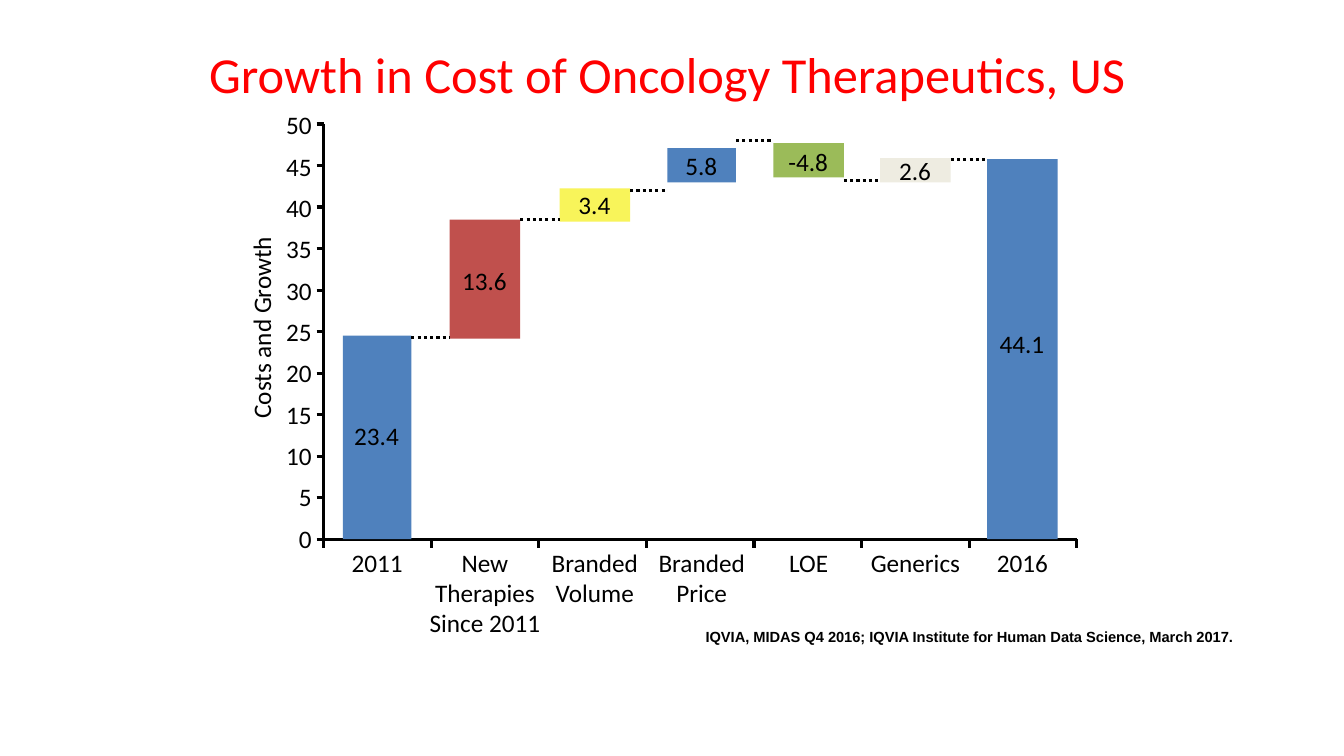
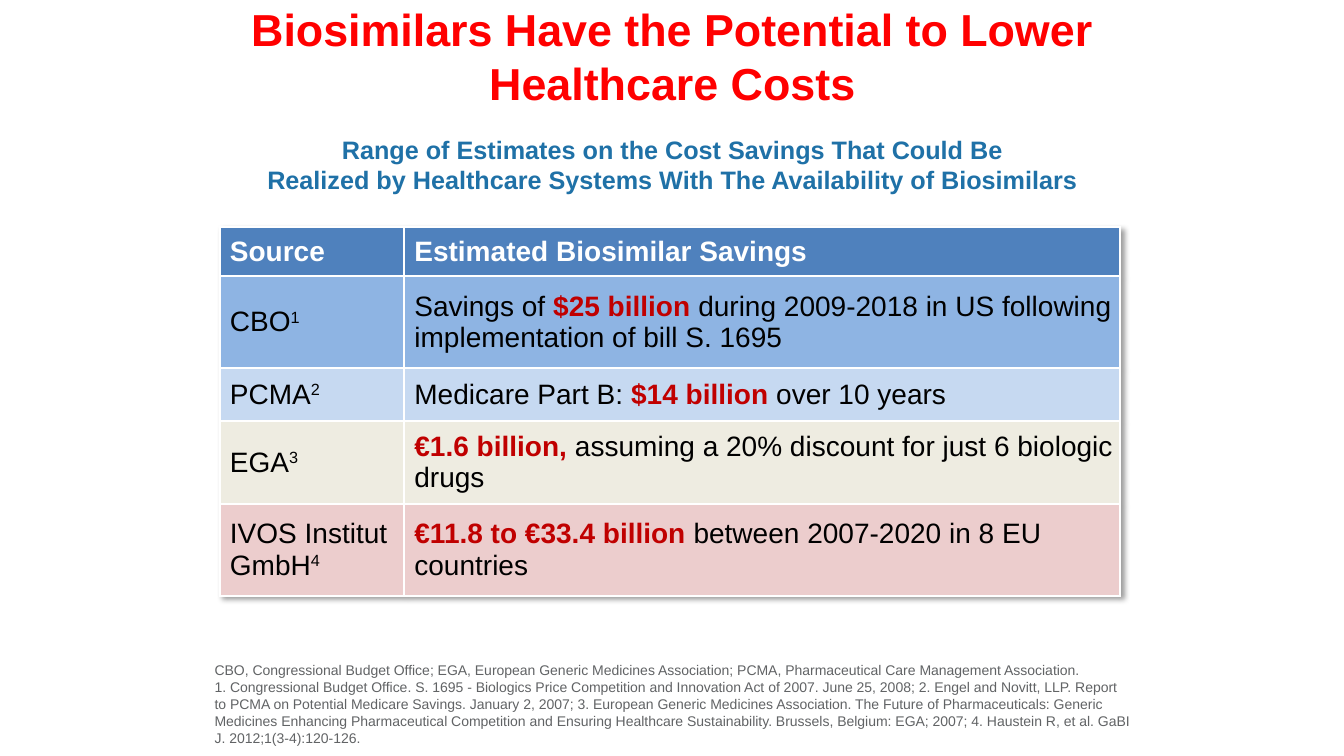
from lxml.etree import SubElement
from pptx import Presentation
from pptx.dml.color import RGBColor
from pptx.enum.dml import MSO_LINE
from pptx.enum.shapes import MSO_CONNECTOR, MSO_SHAPE
from pptx.enum.text import MSO_ANCHOR as Anchor, PP_ALIGN as Align
from pptx.oxml import parse_xml
from pptx.oxml.ns import nsdecls, qn
from pptx.util import Inches, Pt

COLORS = {
    "title": "FF0000", "black": "000000", "white": "FFFFFF", "blue": "4F81BD",
    "red": "C0504D", "yellow": "F8F45A", "green": "9BBB59", "cream": "EEECE1",
    "sky": "8EB4E3", "pale": "C6D9F1", "pink": "ECCDCD", "savings": "C00000",
    "subtitle": "1F71A7", "note": "616365",
}
DEFAULT_INSETS = (0.1, 0.05, 0.1, 0.05)
NO_SIDE_INSETS = (0, 0.05, 0, 0.05)

COST_TITLE = "Growth in Cost of Oncology Therapeutics, US"
COST_SOURCE = "IQVIA, MIDAS Q4 2016; IQVIA Institute for Human Data Science, March 2017."
AXIS_TITLE = "Costs and Growth"
AXIS_MAX, AXIS_STEP = 50, 5
PLOT_LEFT, PLOT_TOP, PLOT_RIGHT, PLOT_BOTTOM = 3.21, 1.23, 10.68, 5.35
BARS = [
    (["2011"], "23.4", "blue", (3.4, 3.33, 0.68, 2.02), 4.12),
    (["New", "Therapies", "Since 2011"], "13.6", "red", (4.46, 2.18, 0.7, 1.18), 2.58),
    (["Branded", "Volume"], "3.4", "yellow", (5.55, 1.87, 0.7, 0.33), 1.83),
    (["Branded", "Price"], "5.8", "blue", (6.62, 1.47, 0.68, 0.34), 1.44),
    (["LOE"], "-4.8", "green", (7.67, 1.42, 0.7, 0.34), 1.4),
    (["Generics"], "2.6", "cream", (8.73, 1.57, 0.7, 0.24), 1.49),
    (["2016"], "44.1", "blue", (9.79, 1.58, 0.7, 3.77), 3.21),
]
LINK_HEIGHTS = [3.35, 2.18, 1.89, 1.39, 1.79, 1.58]

SAVINGS_TITLE = "Biosimilars Have the Potential to Lower Healthcare Costs"
SAVINGS_SUBTITLE = (
    "Range of Estimates on the Cost Savings That Could Be\n"
    "Realized by Healthcare Systems With The Availability of Biosimilars"
)
HEADERS = ["Source", "Estimated Biosimilar Savings"]
ESTIMATES = [
    ("CBO", "1", "Savings of ", "$25 billion ",
     "during 2009-2018 in US following implementation of bill S. 1695", "sky"),
    ("PCMA", "2", "Medicare Part B: ", "$14 billion ", "over 10 years", "pale"),
    ("EGA", "3", "", "€1.6 billion, ",
     "assuming a 20% discount for just 6 biologic drugs", "cream"),
    ("IVOS Institut GmbH", "4", "", "€11.8 to €33.4 billion ",
     "between 2007-2020 in 8 EU countries", "pink"),
]
COLUMN_WIDTHS = [1.83, 7.1]
ROW_HEIGHTS = [0.49, 0.91, 0.53, 0.82, 0.91]
REFERENCES = [
    "CBO, Congressional Budget Office; EGA, European Generic Medicines Association; "
    "PCMA, Pharmaceutical Care Management Association.",
    "1. Congressional Budget Office. S. 1695 - Biologics Price Competition and "
    "Innovation Act of 2007. June 25, 2008; 2. Engel and Novitt, LLP. Report to PCMA "
    "on Potential Medicare Savings. January 2, 2007; 3. European Generic Medicines "
    "Association. The Future of Pharmaceuticals: Generic Medicines Enhancing "
    "Pharmaceutical Competition and Ensuring Healthcare Sustainability. Brussels, "
    "Belgium: EGA; 2007; 4. Haustein R, et al. GaBI J. 2012;1(3-4):120-126.",
]


def rgb(name):
    return RGBColor.from_string(COLORS[name])


def write(frame, paragraphs, size=18, font="Calibri", color="black", bold=False,
          align=Align.LEFT, anchor=Anchor.TOP, insets=DEFAULT_INSETS):
    frame.word_wrap = True
    frame.vertical_anchor = anchor
    (frame.margin_left, frame.margin_top,
     frame.margin_right, frame.margin_bottom) = map(Inches, insets)
    for index, content in enumerate(paragraphs):
        para = frame.add_paragraph() if index else frame.paragraphs[0]
        para.alignment = align
        runs = [(content, {})] if isinstance(content, str) else content
        for text, style in runs:
            for number, line in enumerate(text.split("\n")):
                if number:
                    para.add_line_break()
                span = para.add_run()
                span.text = line
                span.font.size = Pt(size)
                span.font.name = font
                span.font.bold = style.get("bold", bold)
                span.font.color.rgb = rgb(style.get("color", color))
                if style.get("superscript"):
                    span.font._element.set("baseline", "30000")


def add_text(page, place, paragraphs, **style):
    box = page.shapes.add_textbox(*map(Inches, place))
    write(box.text_frame, paragraphs, **style)
    return box


def add_block(page, preset, place, fill=None):
    block = page.shapes.add_shape(preset, *map(Inches, place))
    block.shadow.inherit = False
    block.line.fill.background()
    if fill:
        block.fill.solid()
        block.fill.fore_color.rgb = rgb(fill)
    else:
        block.fill.background()
    return block


def add_title(page, place, text, **style):
    add_text(page, place, [text], color="title", align=Align.CENTER,
             anchor=Anchor.MIDDLE, **style)


def add_line(page, x1, y1, x2, y2, dash=None):
    line = page.shapes.add_connector(
        MSO_CONNECTOR.STRAIGHT, *map(Inches, (x1, y1, x2, y2)))
    line.line.color.rgb = rgb("black")
    line.line.width = Pt(2.25)
    if dash:
        line.line.dash_style = dash
    SubElement(line._element.spPr, qn("a:effectLst"))


def add_axes(page):
    for index, value in enumerate(range(0, AXIS_MAX + 1, AXIS_STEP)):
        y = PLOT_BOTTOM - value / AXIS_MAX * (PLOT_BOTTOM - PLOT_TOP)
        add_line(page, PLOT_LEFT - 0.07, y, PLOT_LEFT, y)
        add_text(page, (2.73, 5.14 - 0.41 * index, 0.46, 0.4), [str(value)],
                 align=Align.RIGHT, insets=(0, 0.05, 0.1, 0.05))
    slot = (PLOT_RIGHT - PLOT_LEFT) / len(BARS)
    for index in range(len(BARS) + 1):
        x = PLOT_LEFT + index * slot
        add_line(page, x, PLOT_BOTTOM, x, PLOT_BOTTOM + 0.09)
    outline = page.shapes.build_freeform(Inches(PLOT_RIGHT), Inches(PLOT_BOTTOM))
    outline.add_line_segments(
        [(Inches(PLOT_LEFT), Inches(PLOT_BOTTOM)), (Inches(PLOT_LEFT), Inches(PLOT_TOP))],
        close=False)
    axes = outline.convert_to_shape()
    axes.shadow.inherit = False
    axes.fill.background()
    axes.line.color.rgb = rgb("black")
    axes.line.width = Pt(2.25)
    label = add_text(page, (1.55, 3.05, 2.08, 0.4), [AXIS_TITLE], align=Align.CENTER)
    label.rotation = 270


def add_bars(page):
    for category, value, color, place, label_top in BARS:
        left, _, width, _ = place
        center = left + width / 2
        add_block(page, MSO_SHAPE.RECTANGLE, place, color)
        add_text(page, (center - 0.33, label_top, 0.65, 0.4), [value],
                 align=Align.CENTER, insets=NO_SIDE_INSETS)
        add_text(page, (center - 0.65, 5.38, 1.3, 0.1 + 0.3 * len(category)), category,
                 align=Align.CENTER, insets=NO_SIDE_INSETS)
    places = [bar[3] for bar in BARS]
    for before, after, y in zip(places, places[1:], LINK_HEIGHTS):
        add_line(page, before[0] + before[2], y, after[0], y, MSO_LINE.ROUND_DOT)


def style_cell(cell, color):
    cell.fill.solid()
    cell.fill.fore_color.rgb = rgb(color)
    properties = cell._tc.get_or_add_tcPr()
    for position, side in enumerate(("lnL", "lnR", "lnT", "lnB")):
        properties.insert(position, parse_xml(
            f'<a:{side} {nsdecls("a")} w="19050"><a:solidFill>'
            f'<a:srgbClr val="{COLORS["white"]}"/></a:solidFill></a:{side}>'))


def add_table(page):
    rows = [(HEADERS, "blue", {"color": "white", "bold": True})]
    for source, number, lead, amount, rest, color in ESTIMATES:
        name = [(source, {}), (number, {"superscript": True})]
        saving = [(lead, {})] if lead else []
        saving += [(amount, {"color": "savings", "bold": True}), (rest, {})]
        rows.append(([name, saving], color, {}))
    table = page.shapes.add_table(
        len(rows), len(COLUMN_WIDTHS), Inches(2.18), Inches(2.25),
        Inches(sum(COLUMN_WIDTHS)), Inches(sum(ROW_HEIGHTS))).table
    table.horz_banding = False
    for column, width in zip(table.columns, COLUMN_WIDTHS):
        column.width = Inches(width)
    for index, (contents, color, style) in enumerate(rows):
        table.rows[index].height = Inches(ROW_HEIGHTS[index])
        for cell, content in zip(table.rows[index].cells, contents):
            write(cell.text_frame, [content], size=20, font="Arial", **style)
            cell.vertical_anchor = Anchor.MIDDLE
            cell.margin_left = Inches(0.1)
            cell.margin_right = cell.margin_top = cell.margin_bottom = Inches(0.05)
            style_cell(cell, color)
    table._tbl.tblPr.insert(0, parse_xml(
        f'<a:effectLst {nsdecls("a")}><a:outerShdw blurRad="50800" dist="38100" '
        f'dir="2700000" algn="tl" rotWithShape="0"><a:srgbClr val="{COLORS["black"]}">'
        '<a:alpha val="40000"/></a:srgbClr></a:outerShdw></a:effectLst>'))


def build_cost_slide(page):
    add_title(page, (1.62, 0.12, 10, 1.21), COST_TITLE, size=36)
    add_text(page, (6.9, 6.16, 6, 0.29), [COST_SOURCE], size=10.5, font="Arial",
             bold=True, anchor=Anchor.BOTTOM)
    add_axes(page)
    add_bars(page)


def build_savings_slide(page):
    add_title(page, (1.67, 0.03, 10, 1.04), SAVINGS_TITLE, size=32, font="Arial", bold=True)
    add_table(page)
    subtitle = add_block(page, MSO_SHAPE.ROUNDED_RECTANGLE, (1.67, 1.23, 10, 0.8))
    write(subtitle.text_frame, [SAVINGS_SUBTITLE], font="Arial", color="subtitle",
          bold=True, align=Align.CENTER, anchor=Anchor.MIDDLE)
    add_text(page, (2.03, 6.51, 9.29, 0.94), REFERENCES, size=10, font="Arial",
             color="note", anchor=Anchor.BOTTOM)


def main():
    deck = Presentation()
    deck.slide_width, deck.slide_height = Inches(13.33), Inches(7.5)
    for build in (build_cost_slide, build_savings_slide):
        build(deck.slides.add_slide(deck.slide_layouts[6]))
    deck.save("out.pptx")


if __name__ == "__main__":
    main()
